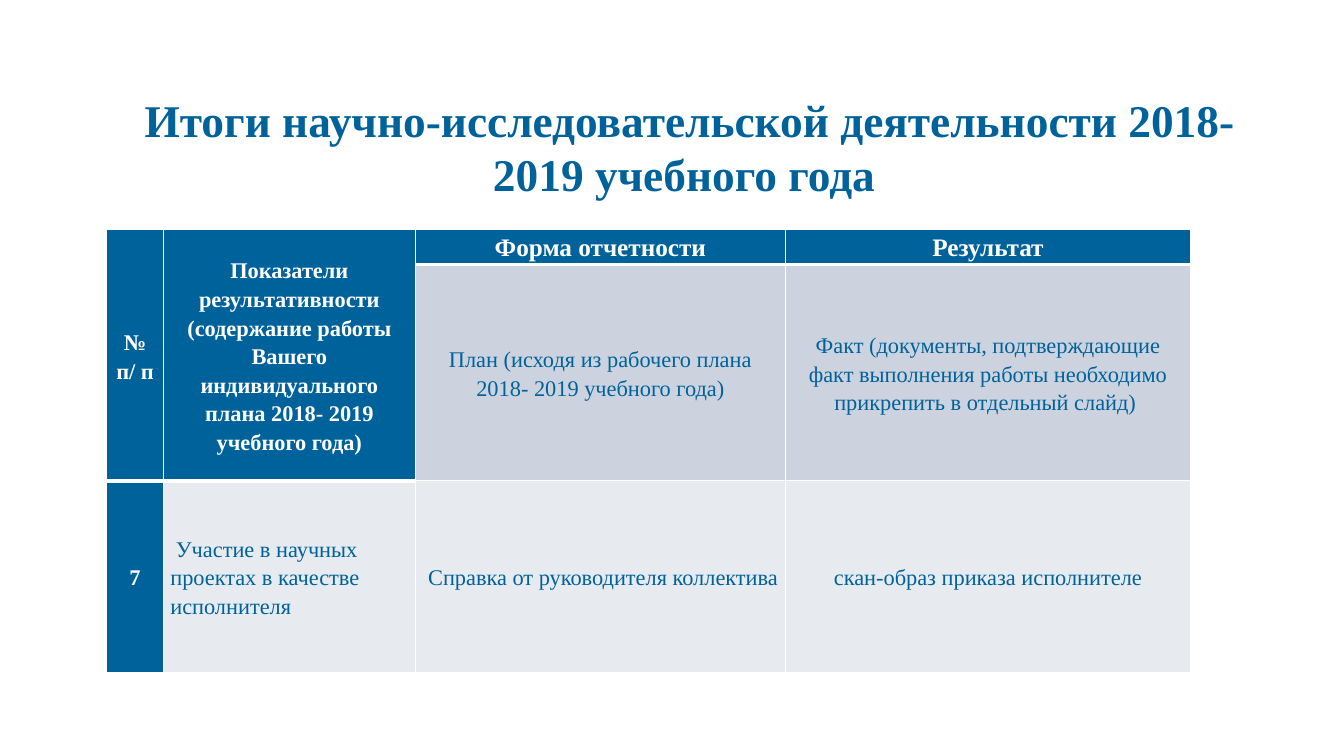
from lxml import etree
from pptx import Presentation
from pptx import util as u
from pptx.dml.color import RGBColor
from pptx.enum import text
from pptx.oxml import ns

WIDTH, HEIGHT = 13.33, 7.5
FONT = "Times New Roman"
BLUE, WHITE, MID, PALE = "00629B", "FFFFFF", "CCD3DE", "E7EAEF"
CENTER, LEFT = text.PP_ALIGN.CENTER, text.PP_ALIGN.LEFT
MIDDLE, TOP = text.MSO_ANCHOR.MIDDLE, text.MSO_ANCHOR.TOP

COLUMNS = [0.56, 2.5, 3.67, 4.02]
ROWS = [0.33, 1.98, 1.9]
THIN, THICK = 1, 3

TITLE = "Итоги научно-исследовательской деятельности 2018- 2019 учебного года "
HEADINGS = [
    ["№ п/ п"],
    ["Показатели результативности",
     "(содержание работы Вашего индивидуального плана 2018- 2019 учебного года)"],
    ["Форма отчетности"],
    ["Результат"],
]
DETAILS = [
    "План (исходя из рабочего плана 2018- 2019 учебного года)",
    "Факт (документы, подтверждающие факт выполнения работы необходимо "
    "прикрепить в отдельный слайд) ",
]
RESULTS = [
    "7",
    " Участие в научных проектах в качестве исполнителя",
    " Справка от руководителя коллектива",
    "скан-образ приказа исполнителе",
]


def color(value):
    return RGBColor.from_string(value)


def add_paragraph(frame, index, words, size, ink, bold, align=CENTER, spacing=1.0):
    para = frame.paragraphs[0] if index == 0 else frame.add_paragraph()
    para.alignment = align
    para.line_spacing = spacing
    span = para.add_run()
    span.text = words
    span.font.name = FONT
    span.font.size = u.Pt(size)
    span.font.bold = bold
    span.font.color.rgb = color(ink)


def add_title(page):
    box = page.shapes.add_textbox(u.Inches(0.84), u.Inches(1), u.Inches(12), u.Inches(0.9))
    frame = box.text_frame
    frame.word_wrap = True
    frame.vertical_anchor = MIDDLE
    add_paragraph(frame, 0, TITLE, 32.4, BLUE, True)


def set_borders(cell, top, bottom):
    """Draw white rules; border elements come before the cell's fill."""
    properties = cell._tc.get_or_add_tcPr()
    weights = {"a:lnL": THIN, "a:lnR": THIN, "a:lnT": top, "a:lnB": bottom}
    for position, (tag, weight) in enumerate(weights.items()):
        line = etree.Element(ns.qn(tag), w=str(u.Pt(weight)))
        fill = etree.SubElement(line, ns.qn("a:solidFill"))
        etree.SubElement(fill, ns.qn("a:srgbClr"), val=WHITE)
        properties.insert(position, line)


def fill_cell(cell, paragraphs, fill, size=16, align=CENTER, anchor=MIDDLE):
    cell.fill.solid()
    cell.fill.fore_color.rgb = color(fill)
    cell.margin_left = cell.margin_right = u.Inches(0.07)
    cell.margin_top = cell.margin_bottom = 0
    cell.vertical_anchor = anchor
    heading = fill == BLUE
    for index, words in enumerate(paragraphs):
        add_paragraph(cell.text_frame, index, words, size,
                      WHITE if heading else BLUE, heading, align, 1.15)


def add_report_table(page):
    frame = page.shapes.add_table(
        len(ROWS), len(COLUMNS), u.Inches(1.06), u.Inches(2.28),
        u.Inches(sum(COLUMNS)), u.Inches(sum(ROWS)))
    table = frame.table
    for column, width in zip(table.columns, COLUMNS):
        column.width = u.Inches(width)
    for row, height in zip(table.rows, ROWS):
        row.height = u.Inches(height)

    # Headings: the first two columns span both heading rows
    for col, paragraphs in enumerate(HEADINGS):
        tall = col < 2
        cell = table.cell(0, col)
        if tall:
            cell.merge(table.cell(1, col))
        fill_cell(cell, paragraphs, BLUE, 16 if tall else 18,
                  anchor=MIDDLE if tall else TOP)
    for col, words in enumerate(DETAILS, start=2):
        fill_cell(table.cell(1, col), [words], MID)

    # Result row
    for col, words in enumerate(RESULTS):
        fill_cell(table.cell(2, col), [words], PALE if col else BLUE,
                  align=LEFT if col == 1 else CENTER)

    # A thick rule closes each column's heading
    for col in range(len(COLUMNS)):
        heading_end = 2 if col < 2 else 1
        for row in range(len(ROWS)):
            set_borders(table.cell(row, col),
                        THICK if row == heading_end else THIN,
                        THICK if row < heading_end else THIN)


def main():
    deck = Presentation()
    deck.slide_width, deck.slide_height = u.Inches(WIDTH), u.Inches(HEIGHT)
    page = deck.slides.add_slide(deck.slide_layouts[6])
    page.background.fill.solid()
    page.background.fill.fore_color.rgb = color(WHITE)
    add_title(page)
    add_report_table(page)
    deck.save("out.pptx")


if __name__ == "__main__":
    main()
